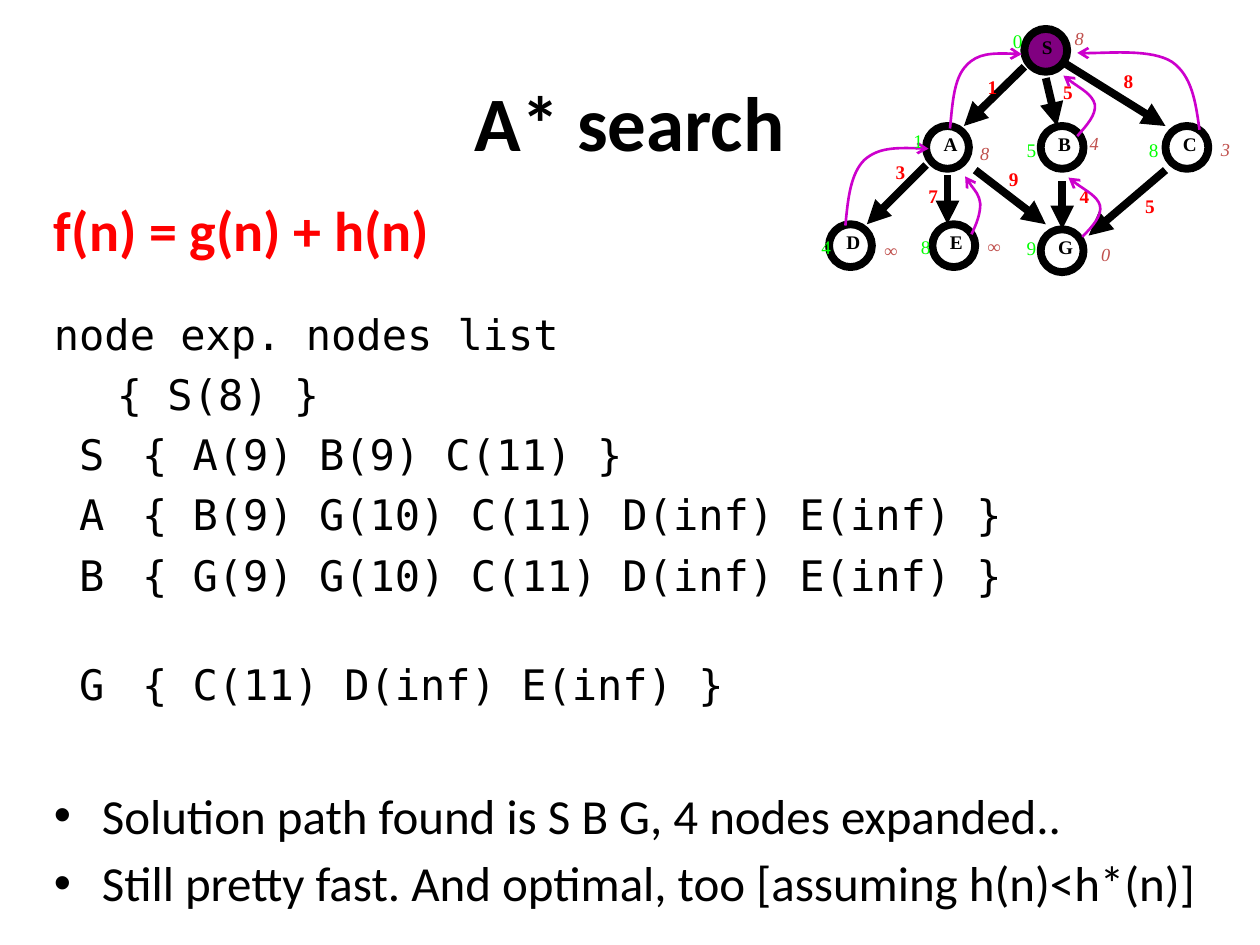
from typing import NamedTuple

from lxml import etree
from pptx import Presentation
from pptx import util as u
from pptx.dml.color import RGBColor
from pptx.enum import shapes, text
from pptx.oxml.ns import qn

BLACK = RGBColor(0x00, 0x00, 0x00)
RED = RGBColor(0xFF, 0x00, 0x00)
GREEN = RGBColor(0x00, 0xFF, 0x00)
BRICK = RGBColor(0xC0, 0x50, 0x4D)
PURPLE = RGBColor(0x80, 0x00, 0x80)
MAGENTA = RGBColor(0xCC, 0x00, 0xCC)
SANS, MONO, SERIF = "Calibri", "DejaVu Sans Mono", "Times New Roman"
NODE_SIZE = 0.34
LABEL_HEIGHT = 0.27
HANGING = 0.38
LIST_COLUMN = 2.21


class Style(NamedTuple):
    size: float
    font: str
    color: RGBColor = BLACK
    bold: bool = False
    italic: bool = False


class Line(NamedTuple):
    text: str
    style: Style
    before: float
    margin: float = 0
    tab: float = LIST_COLUMN
    bullet: bool = False


class Node(NamedTuple):
    name: str
    x: float
    y: float


class Label(NamedTuple):
    text: str
    x: float
    y: float


class Edge(NamedTuple):
    start: tuple[float, float]
    end: tuple[float, float]


TITLE = Style(44, SANS, bold=True)
FORMULA = Style(32, SANS, RED, bold=True)
TRACE = Style(24, MONO)
POINT = Style(28, SANS)
NODE_NAME = Style(11, SERIF, bold=True)
EDGE_COST = Style(11, SERIF, RED, bold=True)
ESTIMATE = Style(10.5, SERIF, BRICK, italic=True)
PATH_COST = Style(11, SERIF, GREEN)

BODY = [
    Line("f(n) = g(n) + h(n)", FORMULA, 0),
    Line("node exp.\tnodes list", TRACE, 26.2, tab=2.81),
    Line("\t{ S(8) }", TRACE, 5.6),
    Line("S\t{ A(9) B(9) C(11) }", TRACE, 5.6, 0.2),
    Line("A\t{ B(9) G(10) C(11) D(inf) E(inf) }", TRACE, 5.6, 0.2),
    Line("B\t{ G(9) G(10) C(11) D(inf) E(inf) }", TRACE, 5.6, 0.2),
    Line("G\t{ C(11) D(inf) E(inf) }", TRACE, 33.6, 0.2),
    Line("Solution path found is S B G, 4 nodes expanded..", POINT, 44, HANGING, bullet=True),
    Line("Still pretty fast. And optimal, too [assuming h(n)<h*(n)]", POINT, 4.7, HANGING, bullet=True),
]
NODES = [
    Node("S", 8.13, 0.23), Node("C", 9.25, 1), Node("B", 8.26, 1), Node("A", 7.35, 1),
    Node("D", 6.58, 1.78), Node("G", 8.26, 1.82), Node("E", 7.4, 1.78),
]
EDGES = [
    Edge((8.13, 0.53), (7.65, 1)), Edge((7.52, 1.39), (7.52, 1.78)),
    Edge((7.74, 1.35), (8.3, 1.78)), Edge((8.3, 0.62), (8.39, 1)),
    Edge((8.43, 0.49), (9.25, 1)), Edge((8.43, 1.44), (8.43, 1.82)),
    Edge((9.25, 1.35), (8.64, 1.87)), Edge((7.35, 1.31), (6.88, 1.78)),
]
EDGE_COSTS = [
    Label("1", 7.74, 0.55), Label("5", 8.34, 0.59), Label("8", 8.82, 0.5), Label("9", 7.91, 1.28),
    Label("4", 8.47, 1.41), Label("5", 8.99, 1.49), Label("3", 7.01, 1.22), Label("7", 7.27, 1.41),
]
ESTIMATES = [
    Label("8", 8.43, 0.17), Label("8", 7.68, 1.08), Label("4", 8.55, 1), Label("3", 9.59, 1.05),
    Label("∞", 7.74, 1.82), Label("∞", 6.92, 1.85), Label("0", 8.64, 1.88),
]
PATH_COSTS = [
    Label("0", 7.94, 0.18), Label("1", 7.15, 0.98), Label("4", 6.42, 1.82), Label("8", 7.21, 1.82),
    Label("9", 8.05, 1.83), Label("8", 9.02, 1.05), Label("5", 8.05, 1.05),
]
# Each back pointer: a start, then two Bézier segments of three points.
BACK_POINTERS = [
    [(7.54, 1.02), (7.56, 0.82), (7.57, 0.62), (7.67, 0.52), (7.76, 0.42), (7.94, 0.42), (8.11, 0.43)],
    [(6.71, 1.79), (6.73, 1.58), (6.75, 1.38), (6.86, 1.27), (6.97, 1.17), (7.17, 1.17), (7.37, 1.18)],
    [(7.71, 1.86), (7.75, 1.78), (7.78, 1.7), (7.78, 1.62), (7.77, 1.54), (7.68, 1.44), (7.66, 1.4)],
    [(8.59, 1.88), (8.67, 1.8), (8.75, 1.71), (8.73, 1.63), (8.71, 1.56), (8.52, 1.45), (8.48, 1.41)],
    [(8.55, 1.08), (8.63, 0.99), (8.7, 0.91), (8.69, 0.83), (8.67, 0.75), (8.48, 0.64), (8.44, 0.6)],
    [(9.52, 1.03), (9.49, 0.81), (9.46, 0.6), (9.3, 0.49), (9.14, 0.39), (8.68, 0.43), (8.55, 0.42)],
]


def inches(*values: float) -> list[u.Length]:
    return [u.Cm(v * 2.54) for v in values]


def style_runs(p, style: Style) -> None:
    for r in p.runs:
        r.font.size = u.Pt(style.size)
        r.font.name = style.font
        r.font.color.rgb = style.color
        r.font.bold = style.bold
        r.font.italic = style.italic


def add_text(parent, content: str, box: tuple, style: Style, wrap: bool = False):
    tf = parent.add_textbox(*inches(*box)).text_frame
    tf.word_wrap = wrap
    tf.auto_size = text.MSO_AUTO_SIZE.NONE if wrap else text.MSO_AUTO_SIZE.SHAPE_TO_FIT_TEXT
    tf.text = content
    style_runs(tf.paragraphs[0], style)
    return tf


def set_indents(p, line: Line) -> None:
    """Set the left margin, the tab stop and, if wanted, a hanging bullet."""
    pPr = p._p.get_or_add_pPr()
    margin, tab = inches(line.margin, line.tab)
    pPr.set("marL", str(margin))
    pPr.set("indent", str(-margin if line.bullet else 0))
    if line.bullet:
        etree.SubElement(pPr, qn("a:buFont"), typeface="Arial")
        etree.SubElement(pPr, qn("a:buChar"), char="•")
    else:
        tabs = etree.SubElement(pPr, qn("a:tabLst"))
        etree.SubElement(tabs, qn("a:tab"), pos=str(tab), algn="l")


def add_body(parent) -> None:
    tf = parent.add_textbox(*inches(0.33, 1.5, 9.67, 5.77)).text_frame
    tf.word_wrap = True
    for i, line in enumerate(BODY):
        p = tf.add_paragraph() if i else tf.paragraphs[0]
        p.text = line.text
        p.space_before = u.Pt(line.before)
        style_runs(p, line.style)
        set_indents(p, line)


def style_line(sp, color: RGBColor, width: float, head: str = "") -> None:
    sp.line.color.rgb = color
    sp.line.width = u.Pt(width)
    if head:
        etree.SubElement(sp.line._get_or_add_ln(), qn("a:tailEnd"), type=head)


def add_node(parent, node: Node) -> None:
    sp = parent.add_shape(shapes.MSO_SHAPE.OVAL, *inches(node.x, node.y, NODE_SIZE, NODE_SIZE))
    sp.shadow.inherit = False
    if node.name == "S":
        sp.fill.solid()
        sp.fill.fore_color.rgb = PURPLE
    else:
        sp.fill.background()
    style_line(sp, BLACK, 4.5)
    add_text(parent, node.name, (node.x + 0.04, node.y, 0.3, LABEL_HEIGHT), NODE_NAME)


def add_edge(parent, edge: Edge) -> None:
    sp = parent.add_connector(shapes.MSO_CONNECTOR.STRAIGHT, *inches(*edge.start, *edge.end))
    style_line(sp, BLACK, 4.5, "triangle")
    etree.SubElement(sp._element.spPr, qn("a:effectLst"))


def add_back_pointer(parent, points: list) -> None:
    """Draw the points as a freeform, then turn each three lines into a cubic curve."""
    start, *rest = [inches(*point) for point in points]
    builder = parent.build_freeform(*start)
    builder.add_line_segments(rest, close=False)
    sp = builder.convert_to_shape()
    sp.shadow.inherit = False
    sp.fill.background()
    style_line(sp, MAGENTA, 1.5, "arrow")
    segments = list(sp._element.iter(qn("a:lnTo")))
    for i in range(0, len(segments), 3):
        curve = etree.Element(qn("a:cubicBezTo"))
        segments[i].addprevious(curve)
        for segment in segments[i:i + 3]:
            curve.append(segment[0])
            segment.getparent().remove(segment)


def add_labels(parent, labels: list[Label], style: Style, width: float) -> None:
    for label in labels:
        add_text(parent, label.text, (label.x, label.y, width, LABEL_HEIGHT), style)


def main() -> None:
    prs = Presentation()
    prs.slide_width, prs.slide_height = inches(10, 7.5)
    s = prs.slides.add_slide(prs.slide_layouts[6])
    tf = add_text(s.shapes, "A* search", (0.75, 0.33, 8.5, 1.25), TITLE, wrap=True)
    tf.vertical_anchor = text.MSO_ANCHOR.MIDDLE
    tf.paragraphs[0].alignment = text.PP_ALIGN.CENTER
    add_body(s.shapes)

    graph = s.shapes.add_group_shape().shapes
    for node in NODES:
        add_node(graph, node)
    for edge in EDGES:
        add_edge(graph, edge)
    add_labels(graph, EDGE_COSTS, EDGE_COST, 0.27)
    add_labels(graph, ESTIMATES, ESTIMATE, 0.32)
    for points in BACK_POINTERS:
        add_back_pointer(graph, points)
    add_labels(graph, PATH_COSTS, PATH_COST, 0.27)
    prs.save("out.pptx")


if __name__ == "__main__":
    main()
